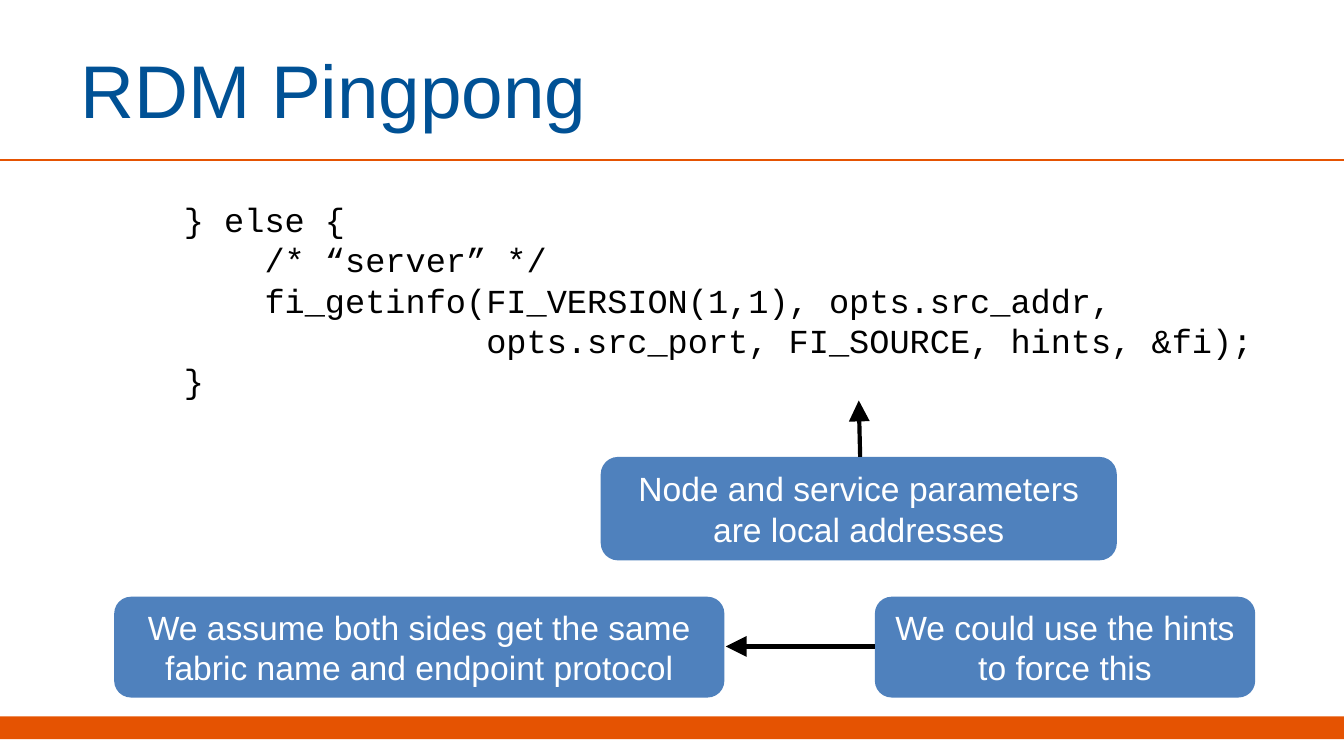
from typing import NamedTuple

from lxml import etree
from pptx import Presentation
from pptx.dml.color import RGBColor
from pptx.enum.shapes import MSO_CONNECTOR, MSO_SHAPE
from pptx.enum.text import MSO_ANCHOR, PP_ALIGN
from pptx.oxml.ns import qn
from pptx.slide import Slide
from pptx.text.text import TextFrame
from pptx.util import Inches, Pt

ORANGE = RGBColor(0xE5, 0x53, 0x02)
TITLE_BLUE = RGBColor(0x00, 0x51, 0x95)
CALLOUT_BLUE = RGBColor(0x4F, 0x81, 0xBD)
BLACK = RGBColor(0x00, 0x00, 0x00)
WHITE = RGBColor(0xFF, 0xFF, 0xFF)

RECTANGLE = MSO_SHAPE.RECTANGLE
ROUNDED_RECTANGLE = MSO_SHAPE.ROUNDED_RECTANGLE
STRAIGHT = MSO_CONNECTOR.STRAIGHT
TOP, MIDDLE = MSO_ANCHOR.TOP, MSO_ANCHOR.MIDDLE
LEFT, CENTER = PP_ALIGN.LEFT, PP_ALIGN.CENTER

TITLE_ONLY_LAYOUT = 5
SLIDE_WIDTH = 10
SLIDE_HEIGHT = SLIDE_WIDTH * 9 / 16

CODE = """\
    } else {
        /* “server” */
        fi_getinfo(FI_VERSION(1,1), opts.src_addr,
                   opts.src_port, FI_SOURCE, hints, &fi);
    }"""


class Callout(NamedTuple):
    text: str
    left: float
    top: float
    width: float
    height: float


class Line(NamedTuple):
    start: tuple[float, float]
    end: tuple[float, float]
    color: RGBColor
    width: float
    arrow: bool


CALLOUTS = [
    Callout("Node and service parameters are local addresses", 4.47, 3.4, 3.84, 0.77),
    Callout("We assume both sides get the same fabric name and endpoint protocol",
            0.85, 4.44, 4.54, 0.75),
    Callout("We could use the hints to force this", 6.51, 4.44, 2.83, 0.75),
]

LINES = [
    Line((0, 1.19), (SLIDE_WIDTH, 1.19), ORANGE, 1, False),
    Line((6.4, 3.4), (6.39, 2.98), BLACK, 2.25, True),
    Line((6.51, 4.81), (5.4, 4.81), BLACK, 2.25, True),
]


def format_text(text_frame: TextFrame, font_name: str, size: float, color: RGBColor,
                alignment: PP_ALIGN, anchor: MSO_ANCHOR) -> None:
    text_frame.word_wrap = True
    text_frame.vertical_anchor = anchor
    text_frame.margin_left = text_frame.margin_right = Inches(0.1)
    text_frame.margin_top = text_frame.margin_bottom = Inches(0.1)
    for paragraph in text_frame.paragraphs:
        paragraph.alignment = alignment
        for run in paragraph.runs:
            run.font.name = font_name
            run.font.size = Pt(size)
            run.font.color.rgb = color


def add_title(slide: Slide, text: str) -> None:
    title = slide.shapes.title
    title.left, title.top = Inches(0.5), Inches(0.19)
    title.width, title.height = Inches(8.17), Inches(0.94)
    title.text_frame.text = text
    format_text(title.text_frame, "Arial", 40, TITLE_BLUE, LEFT, MIDDLE)


def add_footer_bar(slide: Slide) -> None:
    bar = slide.shapes.add_shape(
        RECTANGLE, Inches(0), Inches(5.33), Inches(SLIDE_WIDTH), Inches(0.17))
    bar.shadow.inherit = False
    bar.fill.solid()
    bar.fill.fore_color.rgb = ORANGE
    bar.line.fill.background()


def add_code(slide: Slide, code: str) -> None:
    box = slide.shapes.add_textbox(Inches(0.67), Inches(1.38), Inches(9), Inches(3.81))
    box.text_frame.text = code
    format_text(box.text_frame, "Courier New", 18, BLACK, LEFT, TOP)
    for paragraph in box.text_frame.paragraphs:
        paragraph.line_spacing = Pt(21.6)


def add_callout(slide: Slide, callout: Callout) -> None:
    shape = slide.shapes.add_shape(
        ROUNDED_RECTANGLE, Inches(callout.left), Inches(callout.top),
        Inches(callout.width), Inches(callout.height))
    shape.shadow.inherit = False
    shape.fill.solid()
    shape.fill.fore_color.rgb = CALLOUT_BLUE
    shape.line.fill.background()
    shape.text_frame.text = callout.text
    format_text(shape.text_frame, "Arial", 18, WHITE, CENTER, MIDDLE)


def add_line(slide: Slide, line: Line) -> None:
    connector = slide.shapes.add_connector(
        STRAIGHT, *(Inches(value) for value in line.start + line.end))
    connector.line.color.rgb = line.color
    connector.line.width = Pt(line.width)
    properties = connector._element.spPr
    if line.arrow:
        outline = properties.find(qn("a:ln"))
        etree.SubElement(outline, qn("a:tailEnd"), type="triangle", w="lg", len="lg")
    etree.SubElement(properties, qn("a:effectLst"))


def main() -> None:
    presentation = Presentation()
    presentation.slide_width = Inches(SLIDE_WIDTH)
    presentation.slide_height = Inches(SLIDE_HEIGHT)
    slide = presentation.slides.add_slide(presentation.slide_layouts[TITLE_ONLY_LAYOUT])

    add_footer_bar(slide)
    add_title(slide, "RDM Pingpong")
    add_code(slide, CODE)
    for callout in CALLOUTS:
        add_callout(slide, callout)
    for line in LINES:
        add_line(slide, line)

    presentation.save("out.pptx")


if __name__ == "__main__":
    main()
